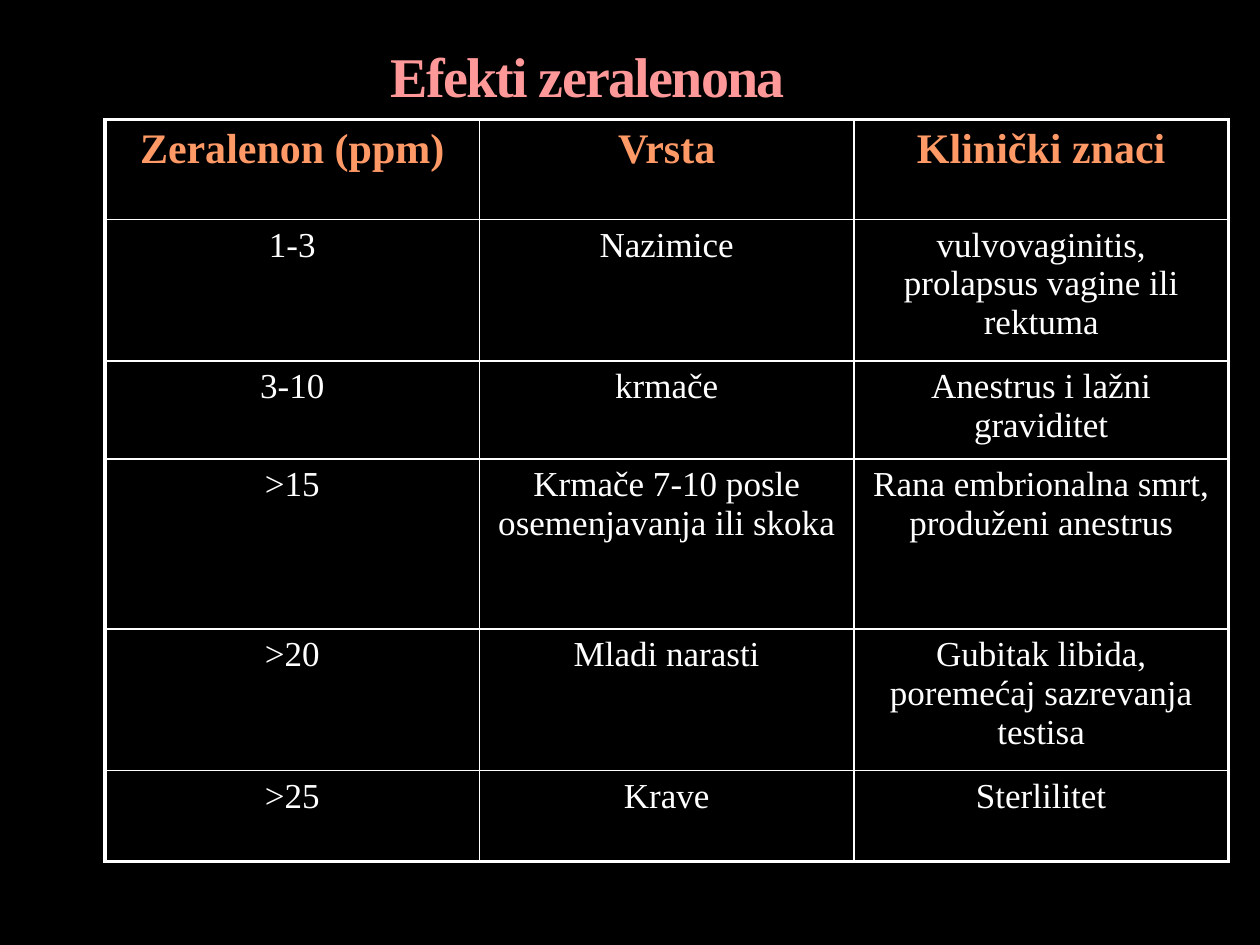
from pptx import Presentation
from pptx import util as u
from pptx.dml import color
from pptx.enum import text
from pptx.oxml import parse_xml
from pptx.oxml import ns

WHITE, BLACK = "FFFFFF", "000000"
COLS = [214] * 3
ROW_HEIGHTS = [57, 81, 56, 97, 81, 52]
ROWS = [
    ("Zeralenon (ppm)", "Vrsta", "Klinički znaci"),
    ("1-3", "Nazimice", "vulvovaginitis, prolapsus vagine ili rektuma"),
    ("3-10", "krmače", "Anestrus i lažni graviditet"),
    (">15", "Krmače 7-10 posle osemenjavanja ili skoka",
     "Rana embrionalna smrt, produženi anestrus"),
    (">20", "Mladi narasti", "Gubitak libida, poremećaj sazrevanja testisa"),
    (">25", "Krave", "Sterlilitet"),
]


def rgb(value):
    return color.RGBColor.from_string(value)


class Deck:
    """Holds the text styles and the current slide."""

    title_style = {"name": "Times New Roman", "size": u.Pt(32), "bold": True}
    head_style = {"name": "Times New Roman", "size": u.Pt(24), "bold": True}
    body_style = {"name": "Times New Roman", "size": u.Pt(20), "bold": False}

    def __init__(self, prs):
        self.s = prs.slides.add_slide(prs.slide_layouts[5])
        fill = self.s.background.fill
        fill.solid()
        fill.fore_color.rgb = rgb(BLACK)

    def add_text(self, tf, words, style, hue, align):
        p = tf.paragraphs[0]
        p.alignment = align
        r = p.add_run()
        r.text = words
        for key, value in style.items():
            setattr(r.font, key, value)
        r.font.color.rgb = rgb(hue)
        return r

    def title(self, words, box, hue):
        sp = self.s.shapes.title
        for key, value in zip(("left", "top", "width", "height"), box):
            setattr(sp, key, u.Pt(value))
        tf = sp.text_frame
        tf.word_wrap = True
        tf.auto_size = text.MSO_AUTO_SIZE.NONE
        tf.vertical_anchor = text.MSO_ANCHOR.BOTTOM
        r = self.add_text(tf, words, self.title_style, hue, text.PP_ALIGN.LEFT)
        r.font._element.set("spc", "-100")

    def border(self, cell, side, width):
        cell._tc.get_or_add_tcPr().append(parse_xml(
            f'<a:ln{side} {ns.nsdecls("a")} w="{u.Pt(width)}"><a:solidFill>'
            f'<a:srgbClr val="{WHITE}"/></a:solidFill></a:ln{side}>'))

    def table(self, rows, left, top, widths, heights, head_hue):
        box = [u.Pt(v) for v in (left, top, sum(widths), sum(heights))]
        tbl = self.s.shapes.add_table(len(rows), len(widths), *box).table
        tbl.first_row = tbl.horz_banding = False
        for col, width in zip(tbl.columns, widths):
            col.width = u.Pt(width)
        for row, height in zip(tbl.rows, heights):
            row.height = u.Pt(height)
        for i, row in enumerate(rows):
            style, hue = (self.body_style, WHITE) if i else (self.head_style, head_hue)
            for j, words in enumerate(row):
                cell = tbl.cell(i, j)
                self.add_text(cell.text_frame, words, style, hue, text.PP_ALIGN.CENTER)
                outer = {"L": j == 0, "R": j == len(widths) - 1,
                         "T": i == 0, "B": i == len(rows) - 1}
                for side, edge in outer.items():
                    self.border(cell, side, 2.25 if edge else 1)
                cell.fill.background()


def main():
    prs = Presentation()
    prs.slide_width, prs.slide_height = u.Pt(720), u.Pt(540)
    deck = Deck(prs)
    deck.title("Efekti zeralenona", (216, 18, 336, 48), "FF9999")
    deck.table(ROWS, 60, 68.4, COLS, ROW_HEIGHTS, "FF9966")
    prs.save("out.pptx")


if __name__ == "__main__":
    main()
